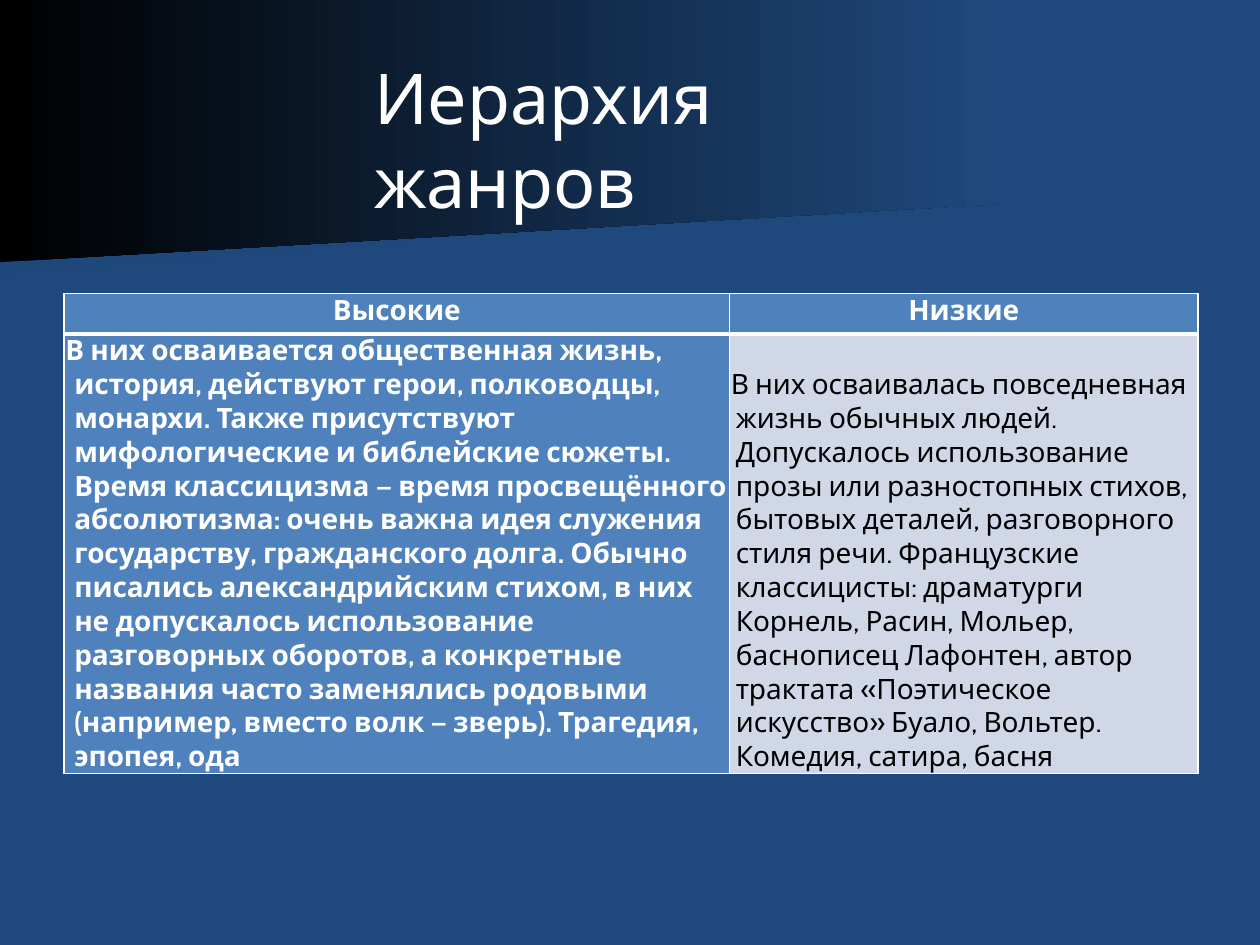
from dataclasses import dataclass

from lxml.etree import SubElement
from pptx import Presentation
from pptx.dml.color import RGBColor
from pptx.enum.text import MSO_ANCHOR, MSO_AUTO_SIZE, PP_ALIGN
from pptx.oxml.ns import qn
from pptx.util import Inches, Pt

FONT = "Cabin"
WHITE, BLACK, NAVY = "FFFFFF", "000000", "1F497D"
BLUE, PALE = "4F81BD", "D0D8E8"


@dataclass
class Genre:
    heading: str
    description: str
    width: float
    indent: float
    fill: str
    color: str
    bold: bool


GENRES = [
    Genre(
        "Высокие",
        "В них осваивается общественная жизнь, история, действуют герои, "
        "полководцы, монархи. Также присутствуют мифологические и библейские "
        "сюжеты. Время классицизма — время просвещённого абсолютизма: очень "
        "важна идея служения государству, гражданского долга. Обычно писались "
        "александрийским стихом, в них не допускалось использование "
        "разговорных оборотов, а конкретные названия часто заменялись "
        "родовыми (например, вместо волк — зверь). Трагедия, эпопея, ода",
        5.28, 0.07, BLUE, WHITE, True,
    ),
    Genre(
        "Низкие",
        "В них осваивалась повседневная жизнь обычных людей. Допускалось "
        "использование прозы или разностопных стихов, бытовых деталей, "
        "разговорного стиля речи. Французские классицисты: драматурги "
        "Корнель, Расин, Мольер, баснописец Лафонтен, автор трактата "
        "«Поэтическое искусство» Буало, Вольтер. Комедия, сатира, басня",
        3.72, 0.04, PALE, BLACK, False,
    ),
]


def rgb(color: str) -> RGBColor:
    return RGBColor.from_string(color)


def style_text(paragraph, size: float, color: str, bold: bool = False) -> None:
    for run in paragraph.runs:
        run.font.name = FONT
        run.font.size = Pt(size)
        run.font.bold = bold
        run.font.color.rgb = rgb(color)


def add_band(slide, points: list[tuple[float, float]], start: str) -> None:
    """Draw an outline that fades from start to the background colour."""
    builder = slide.shapes.build_freeform(
        Inches(points[0][0]), Inches(points[0][1]))
    builder.add_line_segments([(Inches(x), Inches(y)) for x, y in points[1:]])
    band = builder.convert_to_shape()
    band.shadow.inherit = False
    band.line.fill.background()
    band.fill.gradient()
    band.fill.gradient_angle = 0
    for stop, color, position in zip(
            band.fill.gradient_stops, (start, NAVY), (0, 1)):
        stop.color.rgb = rgb(color)
        stop.position = position


def set_borders(cell, bottom: float) -> None:
    properties = cell._tc.get_or_add_tcPr()
    widths = {"a:lnL": 1, "a:lnR": 1, "a:lnT": 1, "a:lnB": bottom}
    for index, (tag, width) in enumerate(widths.items()):
        line = SubElement(properties, qn(tag), w=str(Pt(width)))
        fill = SubElement(line, qn("a:solidFill"))
        SubElement(fill, qn("a:srgbClr"), val=WHITE)
        properties.insert(index, line)


def fill_cell(cell, text: str, fill: str, color: str, bold: bool,
              indent: float, border_bottom: float) -> None:
    cell.text_frame.text = text
    cell.margin_left = cell.margin_right = Inches(0.01)
    cell.margin_top = cell.margin_bottom = 0
    paragraph = cell.text_frame.paragraphs[0]
    style_text(paragraph, 16, color, bold)
    properties = paragraph._p.get_or_add_pPr()
    properties.set("marL", str(Inches(indent)))
    properties.set("indent", str(Inches(-0.14)))
    cell.fill.solid()
    cell.fill.fore_color.rgb = rgb(fill)
    set_borders(cell, border_bottom)


def add_genre_table(slide) -> None:
    table = slide.shapes.add_table(
        2, len(GENRES), Inches(0.51), Inches(2.33), Inches(9), Inches(3.63)
    ).table
    table.rows[0].height = Inches(0.32)
    table.rows[1].height = Inches(3.31)
    for column, genre in enumerate(GENRES):
        table.columns[column].width = Inches(genre.width)
        header, body = table.cell(0, column), table.cell(1, column)
        fill_cell(header, genre.heading, BLUE, WHITE, True, 0, 3)
        header.text_frame.paragraphs[0].alignment = PP_ALIGN.CENTER
        fill_cell(body, genre.description, genre.fill, genre.color,
                  genre.bold, genre.indent, 1)
        body.vertical_anchor = MSO_ANCHOR.BOTTOM


def add_title(slide) -> None:
    title = slide.shapes.title
    title.left, title.top = Inches(2.87), Inches(0.38)
    title.width, title.height = Inches(4.96), Inches(1.08)
    frame = title.text_frame
    frame.text = "Иерархия жанров"
    frame.word_wrap = True
    frame.auto_size = MSO_AUTO_SIZE.SHAPE_TO_FIT_TEXT
    frame.vertical_anchor = MSO_ANCHOR.TOP
    frame.paragraphs[0].alignment = PP_ALIGN.LEFT
    style_text(frame.paragraphs[0], 40, WHITE)


def main() -> None:
    presentation = Presentation()
    presentation.slide_width = Inches(10)
    presentation.slide_height = Inches(7.5)
    slide = presentation.slides.add_slide(presentation.slide_layouts[5])
    slide.background.fill.solid()
    slide.background.fill.fore_color.rgb = rgb(NAVY)
    add_band(slide, [(7.78, 1.53), (0, 2.17), (0, 1.01), (7.79, 1.01),
                     (7.78, 1.28)], "1E477A")
    add_band(slide, [(7.92, 1.62), (0, 2.08), (0, 0), (7.92, 0)], BLACK)
    add_genre_table(slide)
    add_title(slide)
    # The title stands in front of the gradient bands.
    slide.shapes._spTree.append(slide.shapes.title._element)
    presentation.save("out.pptx")


if __name__ == "__main__":
    main()
